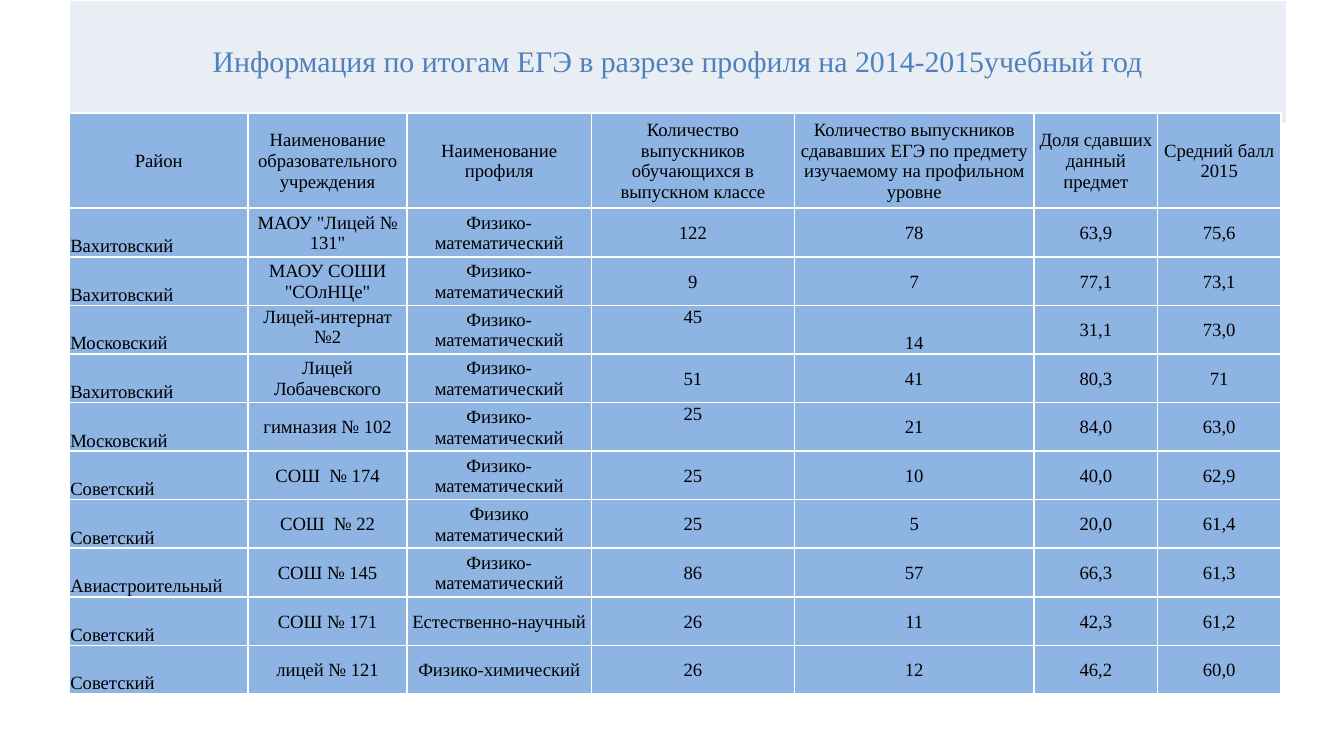
from dataclasses import dataclass, field

from lxml import etree
from pptx import Presentation
from pptx.dml.color import RGBColor
from pptx.enum.text import MSO_ANCHOR, PP_ALIGN
from pptx.oxml.ns import qn
from pptx.util import Pt

TOP, MID, LOW = MSO_ANCHOR.TOP, MSO_ANCHOR.MIDDLE, MSO_ANCHOR.BOTTOM
LEFT, CENTER = PP_ALIGN.LEFT, PP_ALIGN.CENTER
FACE = "Times New Roman"
WHITE = "FFFFFF"
EDGES = ("a:lnL", "a:lnR", "a:lnT", "a:lnB")
INSETS = {"margin_left": 0.7, "margin_right": 0.7, "margin_top": 0.7, "margin_bottom": 0}
PHYS = "Физико-математический"


@dataclass
class Grid:
    left: float
    top: float
    cols: list[float]
    rows: list[float]
    texts: list[tuple[str, ...]]
    fill: str
    ink: str
    size: float
    places: dict[tuple[int, int], MSO_ANCHOR] = field(default_factory=dict)


HEADS = (
    "Район",
    "Наименование образовательного учреждения",
    "Наименование профиля",
    "Количество выпускников обучающихся в выпускном классе",
    "Количество выпускников сдававших ЕГЭ по предмету изучаемому на профильном уровне",
    "Доля сдавших данный предмет",
    "Средний балл 2015",
)
SCHOOLS = [
    ("Вахитовский", 'МАОУ "Лицей № 131"', PHYS, "122", "78", "63,9", "75,6"),
    ("Вахитовский", 'МАОУ СОШИ "СОлНЦе"', PHYS, "9", "7", "77,1", "73,1"),
    ("Московский", "Лицей-интернат №2", PHYS, "45", "14", "31,1", "73,0"),
    ("Вахитовский", "Лицей Лобачевского", PHYS, "51", "41", "80,3", "71"),
    ("Московский", "гимназия № 102", PHYS, "25", "21", "84,0", "63,0"),
    ("Советский", "СОШ  № 174", PHYS, "25", "10", "40,0", "62,9"),
    ("Советский", "СОШ  № 22", "Физико математический", "25", "5", "20,0", "61,4"),
    ("Авиастроительный", "СОШ № 145", PHYS, "86", "57", "66,3", "61,3"),
    ("Советский", "СОШ № 171", "Естественно-научный", "26", "11", "42,3", "61,2"),
    ("Советский", "лицей № 121", "Физико-химический", "26", "12", "46,2", "60,0"),
]
PLACES = {(row, 0): LOW for row in range(1, len(SCHOOLS) + 1)}
PLACES |= {(3, 1): TOP, (3, 3): TOP, (3, 4): LOW, (5, 3): TOP}

TITLE = Grid(
    37, 0, [652.3], [66.2],
    [("Информация по итогам ЕГЭ в разрезе профиля на 2014-2015учебный год",)],
    "E9EDF4", "4F81BD", 16,
)
SCORES = Grid(
    37, 60.5, [96, 85, 98.9, 108.75, 128.4, 66.2, 66],
    [51.1] + [26.04] * len(SCHOOLS), [HEADS, *SCHOOLS],
    "8EB4E3", "000000", 10, PLACES,
)


def color(code: str) -> RGBColor:
    return RGBColor.from_string(code)


def add_edges(cell) -> None:
    props = cell._tc.get_or_add_tcPr()
    for tag in EDGES:
        line = etree.SubElement(props, qn(tag), w=str(Pt(1)))
        solid = etree.SubElement(line, qn("a:solidFill"))
        etree.SubElement(solid, qn("a:srgbClr"), val=WHITE)


def style_cell(cell, text: str, grid: Grid, place: MSO_ANCHOR, align: PP_ALIGN) -> None:
    add_edges(cell)
    cell.fill.solid()
    cell.fill.fore_color.rgb = color(grid.fill)
    for name, inset in INSETS.items():
        setattr(cell, name, Pt(inset))
    cell.vertical_anchor = place
    para = cell.text_frame.paragraphs[0]
    para.alignment = align
    run = para.add_run()
    run.text = text
    for name, value in {"name": FACE, "size": Pt(grid.size), "bold": False}.items():
        setattr(run.font, name, value)
    run.font.color.rgb = color(grid.ink)


def draw_grid(slide, grid: Grid) -> None:
    frame = slide.shapes.add_table(
        len(grid.rows), len(grid.cols), Pt(grid.left), Pt(grid.top),
        Pt(sum(grid.cols)), Pt(sum(grid.rows)),
    )
    table = frame.table
    table.first_row = table.horz_banding = False
    for col, width in zip(table.columns, grid.cols):
        col.width = Pt(width)
    for row, height in zip(table.rows, grid.rows):
        row.height = Pt(height)
    for r, texts in enumerate(grid.texts):
        for c, text in enumerate(texts):
            place = grid.places.get((r, c), MID)
            align = LEFT if r and c == 0 else CENTER
            style_cell(table.cell(r, c), text, grid, place, align)


def main() -> None:
    deck = Presentation()
    deck.slide_width, deck.slide_height = Pt(720), Pt(405)
    slide = deck.slides.add_slide(deck.slide_layouts[6])
    for grid in (TITLE, SCORES):
        draw_grid(slide, grid)
    deck.save("out.pptx")


if __name__ == "__main__":
    main()
